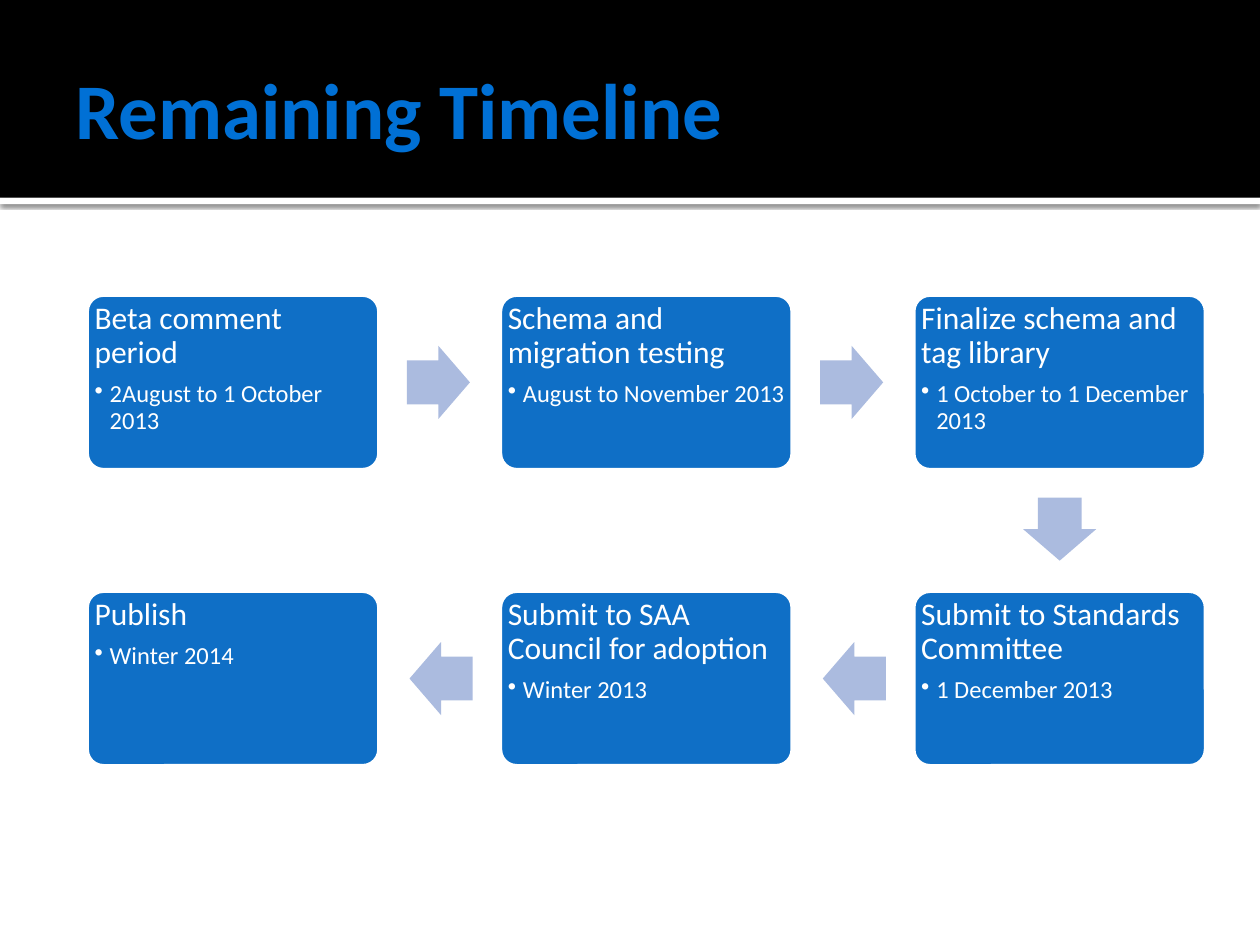
from lxml import etree
from pptx import Presentation
from pptx.dml.color import RGBColor
from pptx.enum.shapes import MSO_SHAPE
from pptx.enum.text import MSO_ANCHOR, PP_ALIGN
from pptx.oxml import parse_xml
from pptx.oxml.ns import nsdecls, qn
from pptx.util import Inches, Pt

RECT, ROUND, ARROW = MSO_SHAPE.RECTANGLE, MSO_SHAPE.ROUNDED_RECTANGLE, MSO_SHAPE.RIGHT_ARROW
TOP, MIDDLE, LEFT = MSO_ANCHOR.TOP, MSO_ANCHOR.MIDDLE, PP_ALIGN.LEFT


def color(code):
    return RGBColor.from_string(code)


def add_shape(kind, x, y, w, h, fill):
    shape = slide.shapes.add_shape(kind, Inches(x), Inches(y), Inches(w), Inches(h))
    shape.shadow.inherit = False
    shape.fill.solid()
    shape.fill.fore_color.rgb = color(fill)
    shape.line.fill.background()
    return shape


deck = Presentation()
deck.slide_width, deck.slide_height = Inches(10), Inches(7.5)
slide = deck.slides.add_slide(deck.slide_layouts[5])

# Header band with a shadowed white rule below it
rule = add_shape(RECT, 0, 1.57, 10, 0.05, "FFFFFF")
effects = rule.element.spPr.find(qn("a:effectLst"))
effects.append(parse_xml(
    f'<a:outerShdw {nsdecls("a")} blurRad="{Pt(2.5)}" dist="{Pt(0.8)}" dir="5400000" '
    'algn="t" rotWithShape="0"><a:srgbClr val="000000"><a:alpha val="60000"/>'
    '</a:srgbClr></a:outerShdw>'))
add_shape(RECT, 0, 0, 10, 1.57, "000000")

# Title, brought in front of the band
title = slide.shapes.title
slide.shapes.element.append(title.element)
title.left, title.top, title.width, title.height = [Inches(n) for n in (0.5, 0.17, 9, 1.37)]
frame = title.text_frame
frame.text = "Remaining Timeline"
frame.vertical_anchor = MIDDLE
frame.margin_right = Inches(0.05)
para = frame.paragraphs[0]
para.alignment = LEFT
for name, value in {"name": "Calibri", "size": Pt(45), "bold": True}.items():
    setattr(para.font, name, value)
para.font.color.rgb = color("0070D5")

# Steps: first row runs right, second row runs back left
steps = [
    ("Beta comment period", "2August to 1 October 2013", 0, 0),
    ("Schema and migration testing", "August to November 2013", 1, 0),
    ("Finalize schema and tag library", "1 October to 1 December 2013", 2, 0),
    ("Submit to Standards Committee", "1 December 2013", 2, 1),
    ("Submit to SAA Council for adoption", "Winter 2013", 1, 1),
    ("Publish", "Winter 2014", 0, 1),
]
BOX_W, BOX_H = 2.34, 1.41
STEP_X, STEP_Y = 3.28, 2.35
ARROW_W, ARROW_H = 0.5, 0.58
SHIFT = 0.01  # arrows sit slightly nearer the step they leave

for i, (head, date, col, row) in enumerate(steps):
    x, y = 0.68 + col * STEP_X, 2.33 + row * STEP_Y
    box = add_shape(ROUND, x, y, BOX_W, BOX_H, "0F6FC6")
    box.adjustments[0] = 0.1
    box.line.color.rgb = color("FFFFFF")
    box.line.width = Pt(3.78)

    # Heading and bulleted date
    frame = box.text_frame
    frame.word_wrap = True
    frame.vertical_anchor = TOP
    for side in ("left", "top", "right", "bottom"):
        setattr(frame, f"margin_{side}", Inches(0.03))
    for text, size, level, after in ((head, 18, 0, 6.3), (date, 14, 1, 2.1)):
        para = frame.add_paragraph() if level else frame.paragraphs[0]
        para.text = text
        form = {"level": level, "alignment": LEFT, "line_spacing": 0.9, "space_after": Pt(after)}
        for name, value in form.items():
            setattr(para, name, value)
        para.font.name, para.font.size = "Calibri", Pt(size)
        para.font.color.rgb = color("FFFFFF")
    props = para.element.get_or_add_pPr() if hasattr(para, "element") else para._p.get_or_add_pPr()
    props.set("marL", str(Inches(0.12)))
    props.set("indent", str(Inches(-0.12)))
    bullet = etree.Element(qn("a:buChar"), char="•")
    props.insert_element_before(bullet, "a:tabLst", "a:defRPr", "a:extLst")

    # Arrow to the next step
    if i + 1 < len(steps):
        across, down = steps[i + 1][2] - col, steps[i + 1][3] - row
        mid_x = x + BOX_W / 2 + across * (STEP_X / 2 - SHIFT)
        mid_y = y + BOX_H / 2 + down * (STEP_Y / 2 - SHIFT)
        arrow = add_shape(ARROW, mid_x - ARROW_W / 2, mid_y - ARROW_H / 2,
                          ARROW_W, ARROW_H, "ABBBDF")
        arrow.adjustments[0], arrow.adjustments[1] = 0.6, 0.5
        arrow.rotation = 90 if down else 90 * (1 - across)

deck.save("out.pptx")
